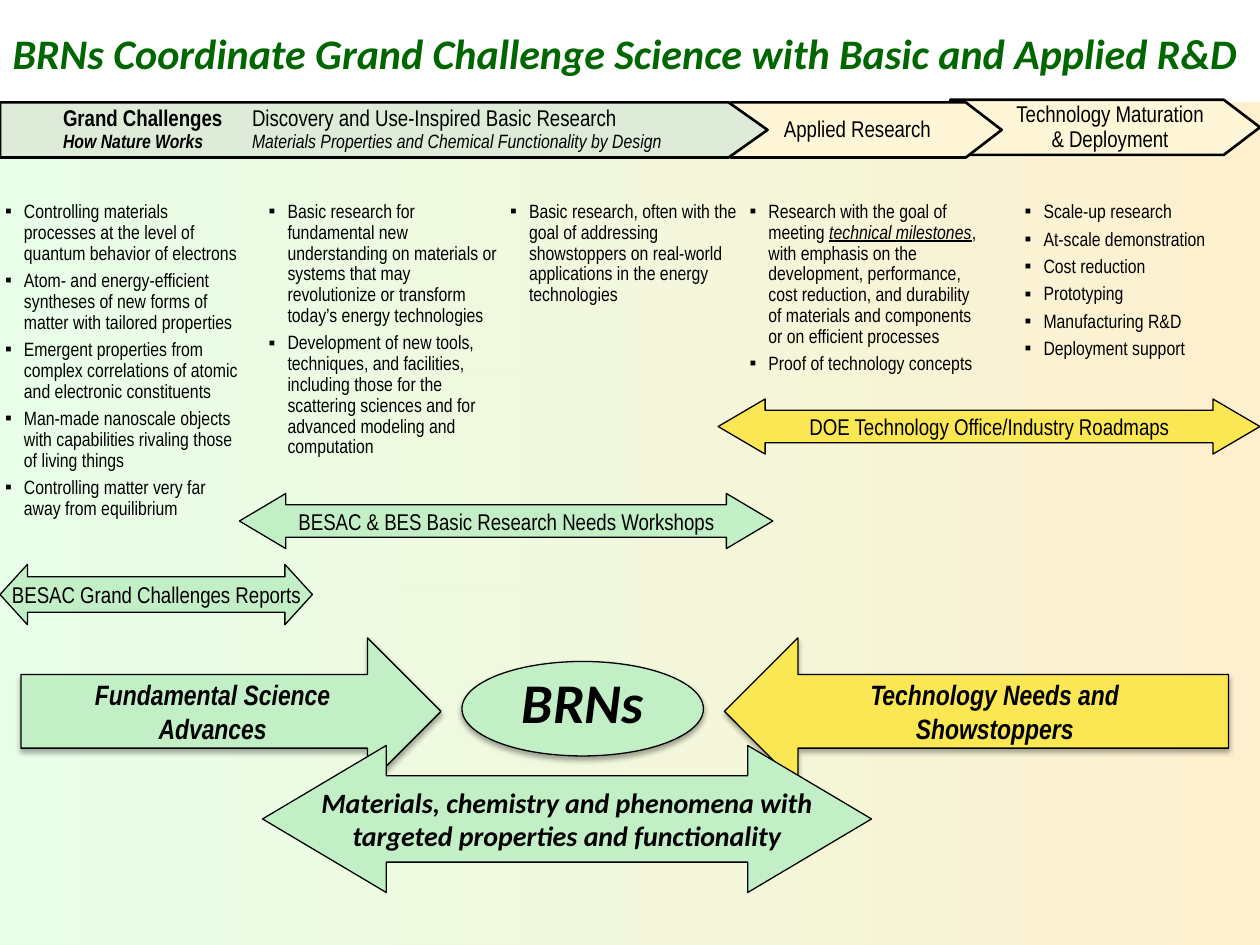
from lxml import etree
from pptx import Presentation, util as u
from pptx.dml.color import RGBColor
from pptx.enum import shapes, text
from pptx.oxml.ns import qn

MSO = shapes.MSO_SHAPE
COLS, ROWS = 120, 90
GREEN, YELLOW, CREAM = "C3EFC7", "FBE753", "FEF6D6"
BOLD = {"bold": True, "italic": True}


def rgb(value):
    return RGBColor.from_string(value)


def sub(parent, tag, **attrs):
    return etree.SubElement(parent, qn(tag), {k: str(v) for k, v in attrs.items()})


class Deck:
    base = {"name": "Arial Narrow", "size": 11, "bold": False, "italic": False}

    def __init__(self):
        self.prs = Presentation()
        self.prs.slide_width, self.prs.slide_height = u.Inches(10), u.Inches(7.5)
        self.s = self.prs.slides.add_slide(self.prs.slide_layouts[5])

    def place(self, x, y, w, h):
        cw, rh = self.prs.slide_width / COLS, self.prs.slide_height / ROWS
        return [round(v) for v in (x * cw, y * rh, w * cw, h * rh)]

    def fill_text(self, sp, paras, fmt=None, align="CENTER", spacing=1.0, gap=0,
                  ins=(0.1, 0.05), wrap=True, anchor="MIDDLE", indent=0, hang=0,
                  bullet=None, tabs=None):
        tf = sp.text_frame
        frame = {"word_wrap": wrap, "auto_size": text.MSO_AUTO_SIZE.NONE,
                 "vertical_anchor": text.MSO_ANCHOR[anchor],
                 "margin_left": u.Inches(ins[0]), "margin_right": u.Inches(ins[0]),
                 "margin_top": u.Inches(ins[1]), "margin_bottom": u.Inches(ins[1])}
        for key, value in frame.items():
            setattr(tf, key, value)
        for i, runs in enumerate(paras):
            p = tf.paragraphs[0] if i == 0 else tf.add_paragraph()
            p.alignment, p.line_spacing = text.PP_ALIGN[align], spacing
            if i and gap:
                p.space_before = u.Pt(gap)
            pPr = p._p.get_or_add_pPr()
            pPr.set("marL", str(u.Inches(indent)))
            pPr.set("indent", str(u.Inches(-hang)))
            if bullet:
                sub(pPr, "a:buFont", typeface="Arial")
                sub(pPr, "a:buChar", char=bullet)
            if tabs:
                tab_list = sub(pPr, "a:tabLst")
                for stop in tabs[i]:
                    sub(tab_list, "a:tab", pos=u.Inches(stop), algn="l")
            for run in [(runs, {})] if isinstance(runs, str) else runs:
                r = p.add_run()
                r.text = run[0]
                r.font.color.rgb = rgb("000000")
                for key, value in {**self.base, **(fmt or {}), **run[1]}.items():
                    setattr(r.font, key, u.Pt(value) if key == "size" else value)

    def title(self, box, words, color, **fmt):
        sp = self.s.shapes.title
        sp.left, sp.top, sp.width, sp.height = self.place(*box)
        self.fill_text(sp, [words], fmt, align="LEFT")
        sp.text_frame.paragraphs[0].runs[0].font.color.rgb = rgb(color)

    def label(self, box, paras, fmt=None, **style):
        sp = self.s.shapes.add_textbox(*self.place(*box))
        self.fill_text(sp, paras, fmt, **style)

    def bullets(self, box, items):
        self.label(box, items, align="LEFT", spacing=0.9, gap=3.8, ins=(0.04, 0.04),
                   anchor="TOP", indent=0.15, hang=0.15, bullet="▪")

    def shape(self, kind, box, fill, line=0.75, adj=(), shadow=False):
        sp = self.s.shapes.add_shape(kind, *self.place(*box))
        sp.shadow.inherit = False
        for i, value in enumerate(adj):
            sp.adjustments[i] = value
        if isinstance(fill, str):
            sp.fill.solid()
            sp.fill.fore_color.rgb = rgb(fill)
        else:
            sp.fill.gradient()
            sp.fill.gradient_angle = 0
            for stop, (color, alpha) in zip(sp.fill.gradient_stops, fill):
                stop.color.rgb = rgb(color)
            for clr, (color, alpha) in zip(sp._element.spPr.iter(qn("a:srgbClr")), fill):
                if alpha < 100:
                    sub(clr, "a:alpha", val=alpha * 1000)
        if line:
            sp.line.color.rgb, sp.line.width = rgb("000000"), u.Pt(line)
        else:
            sp.line.fill.background()
        if shadow:
            effects = sp._element.spPr.find(qn("a:effectLst"))
            outer = sub(effects, "a:outerShdw", blurRad=u.Pt(3.1), dist=u.Pt(1.8),
                        dir=5400000, rotWithShape=0)
            sub(sub(outer, "a:srgbClr", val="000000"), "a:alpha", val=35000)
        return sp

    def stage(self, box, fill, adj, paras, **style):
        sp = self.shape(MSO.PENTAGON, box, fill, 1.5, [adj])
        self.fill_text(sp, paras, {"size": 13}, spacing=0.9, ins=(0, 0.04), **style)

    def span(self, box, fill, head, paras, **fmt):
        sp = self.shape(MSO.LEFT_RIGHT_ARROW, box, fill, adj=[0.587, head])
        self.fill_text(sp, paras, {"size": 13, **fmt}, ins=(0.09, 0.04), wrap=False)

    def push(self, kind, box, fill, paras):
        sp = self.shape(kind, box, fill, shadow=True)
        self.fill_text(sp, paras, {"size": 16, **BOLD})


def main():
    d = Deck()
    d.shape(MSO.RECTANGLE, (0, 9.8, COLS, 80.2), [("DDFFDD", 64), ("FEEBBC", 71)], line=0)

    lists = [
        (0, 23.6, 28, [
            "Controlling materials processes at the level of quantum behavior of electrons",
            "Atom- and energy-efficient syntheses of new forms of matter with tailored properties",
            "Emergent properties from complex correlations of atomic and electronic constituents",
            "Man-made nanoscale objects with capabilities rivaling those of living things",
            "Controlling matter very far away from equilibrium"]),
        (25.1, 22.9, 28, [
            "Basic research for fundamental new understanding on materials or systems that may "
            "revolutionize or transform today’s energy technologies",
            "Development of new tools, techniques, and facilities, including those for the "
            "scattering sciences and for advanced modeling and computation"]),
        (48.1, 22.9, 13.3, [
            "Basic research, often with the goal of addressing showstoppers on real-world "
            "applications in the energy technologies"]),
        (70.9, 22.9, 19.2, [
            [("Research with the goal of meeting ", {}),
             ("technical milestones", {"italic": True, "underline": True}),
             (", with emphasis on the development, performance, cost reduction, and durability "
              "of materials and components or on efficient processes", {})],
            "Proof of technology concepts"]),
        (97.1, 22.9, 15, [
            "Scale-up research", "At-scale demonstration", "Cost reduction", "Prototyping",
            "Manufacturing R&D", "Deployment support"]),
    ]
    for x, w, h, items in lists:
        d.bullets((x, 18.75, w, h), items)

    d.stage((90.5, 9.5, 29.5, 5.25), CREAM, 0.657,
            ["Technology Maturation", "& Deployment"], indent=0.22, wrap=False)
    d.stage((69.6, 9.75, 25.8, 5.25), CREAM, 0.651, ["Applied Research"], wrap=False)
    d.stage((0, 9.75, 73.1, 5.25), [("DFEBD9", 100), ("DFEBD6", 100)], 0.706, [
        [("\tGrand Challenges", {"bold": True}),
         ("\tDiscovery and Use-Inspired Basic Research", {})],
        [("\tHow Nature Works", {"size": 11, **BOLD}),
         ("\tMaterials Properties and Chemical Functionality by Design",
          {"size": 11, "italic": True})],
    ], align="LEFT", tabs=[(0.16, 2.25), (0.2, 2.09)])

    d.span((22.8, 47, 50.8, 5.25), GREEN, 0.842, ["BESAC & BES Basic Research Needs Workshops"])
    d.span((0, 53.75, 29.75, 5.75), GREEN, 0.455, ["BESAC Grand Challenges Reports"])
    d.span((68.4, 38, 51.6, 5.25), YELLOW, 0.853, ["DOE Technology Office/Industry Roadmaps"])

    d.title((0, 2, 119.6, 6),
            "BRNs Coordinate Grand Challenge Science with Basic and Applied R&D",
            "006600", name="Calibri", size=24, **BOLD)

    d.push(MSO.LEFT_ARROW, (69, 60.75, 48, 14), YELLOW, ["Technology Needs and", "Showstoppers"])
    d.push(MSO.RIGHT_ARROW, (2, 60.75, 40, 14), GREEN, ["Fundamental Science", "Advances"])
    d.span((25, 71, 58, 14), GREEN, 0.842,
           ["Materials, chemistry and phenomena with", "targeted properties and functionality"],
           name="Calibri", size=16, **BOLD)
    d.shape(MSO.OVAL, (44, 63, 23, 9), GREEN, shadow=True)
    d.label((46.5, 63, 18, 7.7), ["BRNs"], {"name": "Calibri", "size": 32, **BOLD}, anchor="TOP")
    d.prs.save("out.pptx")


if __name__ == "__main__":
    main()
